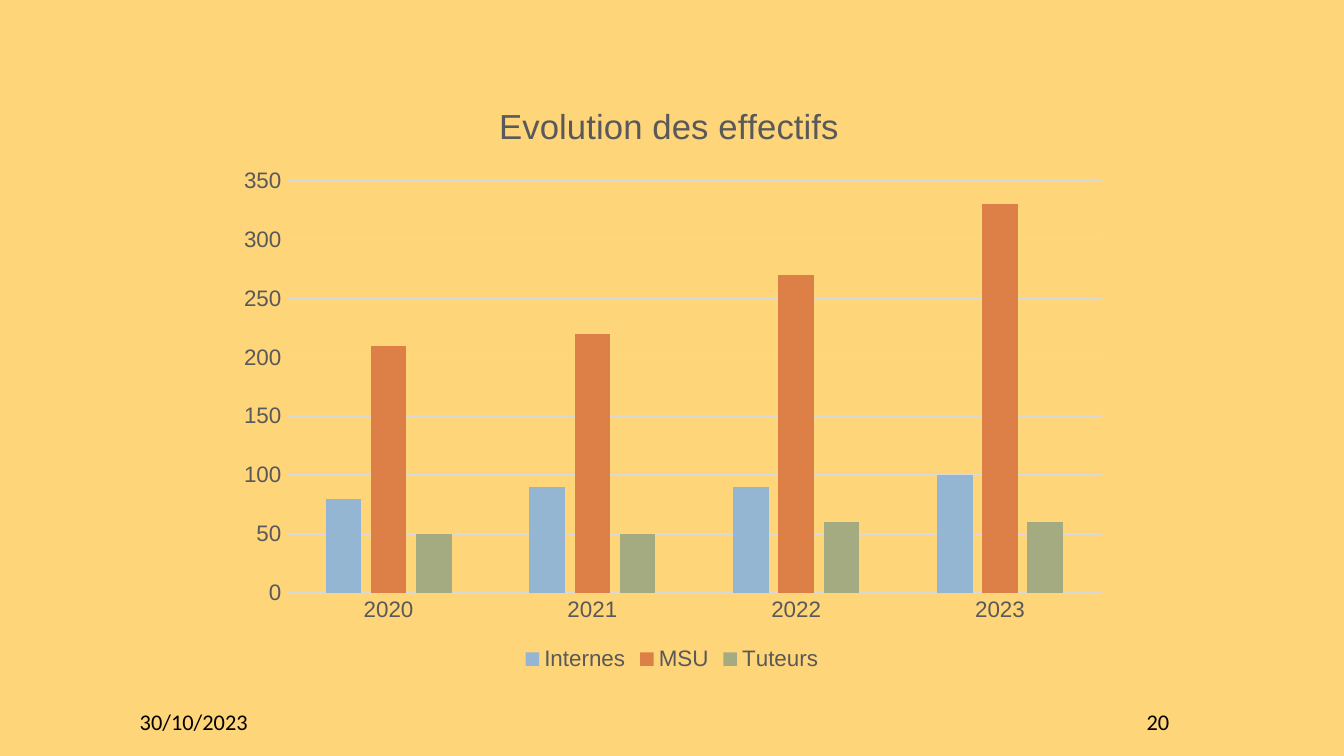
from pptx import Presentation, util as u
from pptx.chart.data import CategoryChartData
from pptx.dml.color import RGBColor
from pptx.enum import chart as ch, text
from pptx.oxml import parse_xml
from pptx.oxml.ns import nsdecls

COLORS = {"back": "FFD579", "text": "000000", "label": "595959", "grid": "D9D9D9",
          "Internes": "94B6D2", "MSU": "DD8047", "Tuteurs": "A5AB81"}
VALUES = {"Internes": (80, 90, 90, 100),
          "MSU": (210, 220, 270, 330),
          "Tuteurs": (50, 50, 60, 60)}


def set_font(font, size, color, name="Arial"):
    for key, value in {"size": u.Pt(size), "name": name, "bold": False}.items():
        setattr(font, key, value)
    font.color.rgb = RGBColor.from_string(COLORS[color])


def manual_layout(target="", **shares):
    """Return a chart layout placed by shares of the chart's size."""
    tags = f'<c:layoutTarget val="{target}"/>' if target else ""
    tags += "".join(f'<c:{k}Mode val="edge"/>' for k in "xy")
    tags += "".join(f'<c:{k} val="{v}"/>' for k, v in shares.items())
    return parse_xml(f'<c:layout {nsdecls("c")}><c:manualLayout>{tags}'
                     '</c:manualLayout></c:layout>')


prs = Presentation()
W = u.Inches(10)
H = W * 9 // 16
prs.slide_width, prs.slide_height = W, H
s = prs.slides.add_slide(prs.slide_layouts[6])
s.background.fill.solid()
s.background.fill.fore_color.rgb = RGBColor.from_string(COLORS["back"])

# Footer: date on the left, slide number on the right
for words, left, width, align in (("30/10/2023", 1.04, 1.04, text.PP_ALIGN.LEFT),
                                  ("20", 7.44, 1.26, text.PP_ALIGN.RIGHT)):
    sp = s.shapes.add_textbox(u.Inches(left), u.Inches(5.18), u.Inches(width), u.Inches(0.39))
    tf = sp.text_frame
    for key, value in {"word_wrap": True, "vertical_anchor": text.MSO_ANCHOR.MIDDLE,
                       "margin_left": 0, "margin_right": 0,
                       "margin_top": 0, "margin_bottom": 0}.items():
        setattr(tf, key, value)
    p = tf.paragraphs[0]
    p.alignment, p.line_spacing = align, 0.95
    r = p.add_run()
    r.text = words
    set_font(r.font, 12, "text", "Calibri")

# Chart: two thirds of the slide's width, centred
data = CategoryChartData()
data.categories = ["2020", "2021", "2022", "2023"]
for name, values in VALUES.items():
    data.add_series(name, values)
chart = s.shapes.add_chart(ch.XL_CHART_TYPE.COLUMN_CLUSTERED, W // 6, u.Inches(0.59),
                           W * 2 // 3, int(H * 0.79), data).chart
set_font(chart.font, 10, "text")

chart.has_title = True
p = chart.chart_title.text_frame.paragraphs[0]
r = p.add_run()
r.text = "Evolution des effectifs"
set_font(r.font, 18.6, "label")
title = chart.chart_title._element
for old in title.findall("{*}layout"):
    title.remove(old)
title.find("{*}tx").addnext(manual_layout(x=0.3, y=0.03))
chart.chart_title.include_in_layout = False

area = chart._chartSpace.chart.plotArea
for old in area.findall("{*}layout"):
    area.remove(old)
area.insert(0, manual_layout("inner", x=0.07, y=0.17, w=0.91, h=0.69))

chart.has_legend = True
chart.legend.position = ch.XL_LEGEND_POSITION.BOTTOM
chart.legend.include_in_layout = False
set_font(chart.legend.font, 12, "label")

cat, val = chart.category_axis, chart.value_axis
for axis in (cat, val):
    axis.major_tick_mark = axis.minor_tick_mark = ch.XL_TICK_MARK.NONE
    set_font(axis.tick_labels.font, 12, "label")
val.minimum_scale, val.maximum_scale, val.major_unit = 0, 350, 50
val.format.line.fill.background()
for line in (cat.format.line, val.major_gridlines.format.line):
    line.width = u.Pt(0.75)
    line.color.rgb = RGBColor.from_string(COLORS["grid"])

plot = chart.plots[0]
plot.gap_width, plot.overlap, plot.vary_by_categories = 219, -27, False
for series in plot.series:
    series.format.fill.solid()
    series.format.fill.fore_color.rgb = RGBColor.from_string(COLORS[series.name])

prs.save("out.pptx")
